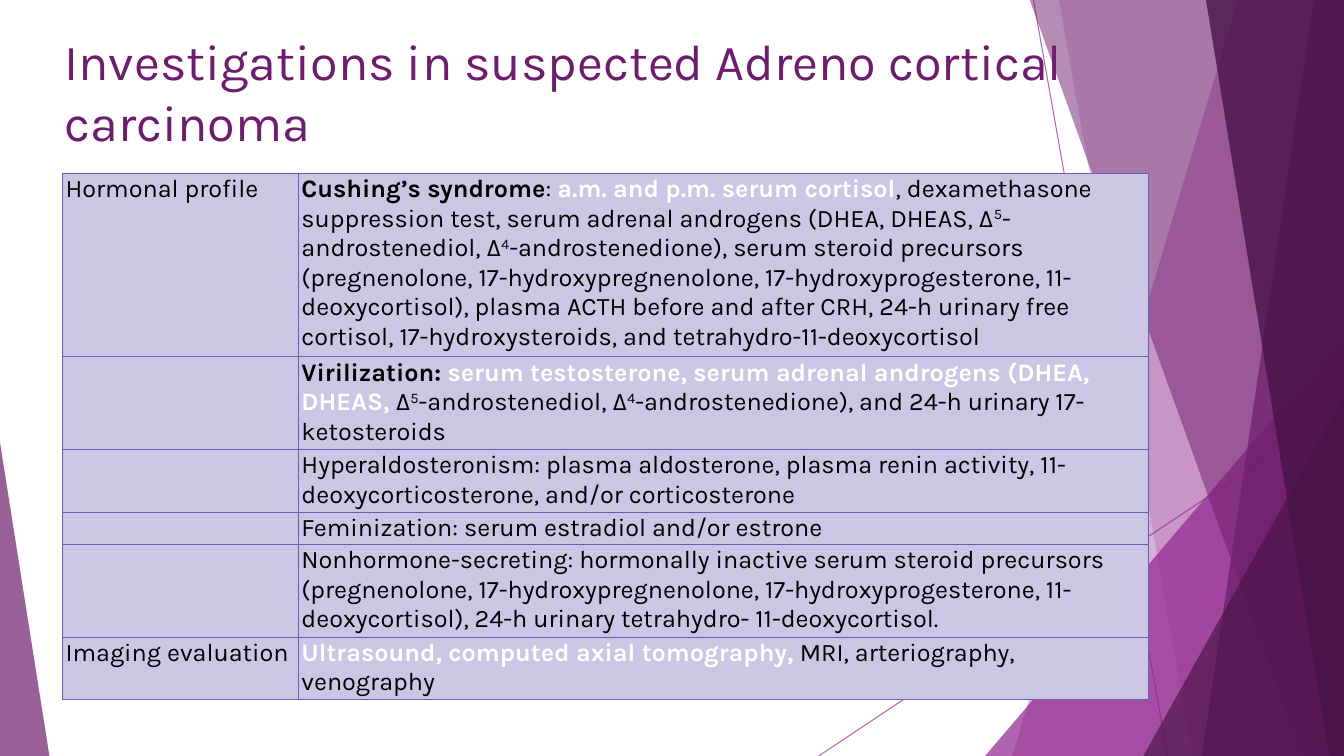
import pptx
import pptx.dml.color
import pptx.enum.shapes
import pptx.enum.text
import pptx.oxml
import pptx.oxml.ns
import pptx.util

Inches = pptx.util.Inches
qn = pptx.oxml.ns.qn
RGB = pptx.dml.color.RGBColor.from_string
COLORS = {
    "magenta": "92278F", "purple": "6D1D6B", "plum": "491447",
    "cell": "CAC6E3", "border": "665EB8", "black": "000000", "white": "FFFFFF",
}
WIDTH, HEIGHT = 13.33, 7.5


def add_text(paragraph, text, size=18, color="black", bold=False, superscript=False):
    run = paragraph.add_run()
    run.text = text
    run.font.name = "Karla"
    run.font.size = pptx.util.Pt(size)
    run.font.bold = bold
    run.font.color.rgb = RGB(COLORS[color])
    if superscript:
        run.font._element.set("baseline", "30000")


def paint(shape, fill, color, opacity):
    fill.solid()
    fill.fore_color.rgb = RGB(COLORS[color])
    alpha = pptx.oxml.parse_xml(f'<a:alpha {pptx.oxml.ns.nsdecls("a")} val="{opacity * 1000}"/>')
    shape._element.spPr.find(".//" + qn("a:srgbClr")).append(alpha)


presentation = pptx.Presentation()
presentation.slide_width = Inches(WIDTH)
presentation.slide_height = Inches(HEIGHT)
slide = presentation.slides.add_slide(presentation.slide_layouts[6])

# Thin background lines
for x1, y1, x2, y2 in [(10.25, 0, 11.58, HEIGHT), (WIDTH, 4.03, 8.12, HEIGHT)]:
    connector = slide.shapes.add_connector(
        pptx.enum.shapes.MSO_CONNECTOR.STRAIGHT,
        Inches(x1), Inches(y1), Inches(x2), Inches(y2))
    connector.line.width = pptx.util.Pt(0.75)
    paint(connector, connector.line.fill, "magenta", 70)
    connector._element.spPr.append(pptx.oxml.parse_xml(f'<a:effectLst {pptx.oxml.ns.nsdecls("a")}/>'))

# Background facets, back to front
# band: top left x, bottom left x; triangle: left, top, width, apex position
facets = [
    ("band", (12.28, 10.04), "magenta", 36),
    ("band", (10.5, 11.83), "magenta", 20),
    ("triangle", (9.77, 3.33, 3.56, 1), "magenta", 72),
    ("band", (10.21, 12.91), "purple", 50),
    ("band", (13.03, 11.92), "purple", 70),
    ("band", (11.96, 13.18), "plum", 80),
    ("triangle", (11.34, 3.93, 1.99, 1), "plum", 66),
    ("triangle", (0, 4.39, 0.49, 0), "purple", 70),
]
for kind, geometry, color, opacity in facets:
    if kind == "band":
        top_x, bottom_x = geometry
        builder = slide.shapes.build_freeform(Inches(top_x), Inches(-0.01))
        corners = [(WIDTH, -0.01), (WIDTH, HEIGHT), (bottom_x, HEIGHT)]
        builder.add_line_segments([(Inches(x), Inches(y)) for x, y in corners], close=True)
        shape = builder.convert_to_shape()
    else:
        left, top, width, apex = geometry
        shape = slide.shapes.add_shape(
            pptx.enum.shapes.MSO_SHAPE.ISOSCELES_TRIANGLE,
            Inches(left), Inches(top), Inches(width), Inches(HEIGHT - top))
        shape.adjustments[0] = apex
    shape.shadow.inherit = False
    shape.line.fill.background()
    paint(shape, shape.fill, color, opacity)

# Title
title = slide.shapes.add_textbox(Inches(0.54), Inches(0.18), Inches(10.42), Inches(1.44))
title.text_frame.word_wrap = True
title.text_frame.vertical_anchor = pptx.enum.text.MSO_ANCHOR.MIDDLE
add_text(title.text_frame.paragraphs[0], "Investigations in suspected Adreno cortical carcinoma",
         size=36, color="purple")

# Table content: row height, label, runs of the description
PLAIN = {}
BOLD = {"bold": True}
HIGHLIGHT = {"bold": True, "color": "white"}
SUPER = {"superscript": True}
rows = [
    (1.79, "Hormonal profile", [
        ("Cushing’s syndrome", BOLD), (": ", PLAIN),
        ("a.m. and p.m. serum cortisol", HIGHLIGHT),
        (", dexamethasone suppression test, serum adrenal androgens (DHEA, DHEAS, Δ", PLAIN),
        ("5", SUPER), ("-androstenediol, Δ", PLAIN), ("4", SUPER),
        ("-androstenedione), serum steroid precursors (pregnenolone, "
         "17-hydroxypregnenolone, 17-hydroxyprogesterone, 11-deoxycortisol), "
         "plasma ACTH before and after CRH, 24-h urinary free cortisol, "
         "17-hydroxysteroids, and tetrahydro-11-deoxycortisol", PLAIN)]),
    (0.91, "", [
        ("Virilization: ", BOLD),
        ("serum testosterone, serum adrenal androgens (DHEA, DHEAS, ", HIGHLIGHT),
        ("Δ", PLAIN), ("5", SUPER), ("-androstenediol, Δ", PLAIN), ("4", SUPER),
        ("-androstenedione), and 24-h urinary 17-ketosteroids", PLAIN)]),
    (0.61, "", [
        ("Hyperaldosteronism: plasma aldosterone, plasma renin activity, "
         "11-deoxycorticosterone, and/or corticosterone", PLAIN)]),
    (0.32, "", [("Feminization: serum estradiol and/or estrone", PLAIN)]),
    (0.9, "", [
        ("Nonhormone-secreting: hormonally inactive serum steroid precursors "
         "(pregnenolone, 17-hydroxypregnenolone, 17-hydroxyprogesterone, "
         "11-deoxycortisol), 24-h urinary tetrahydro- 11-deoxycortisol.", PLAIN)]),
    (0.61, "Imaging evaluation", [
        ("Ultrasound, computed axial tomography,", HIGHLIGHT),
        (" MRI, arteriography, venography", PLAIN)]),
]

# Table
table = slide.shapes.add_table(
    len(rows), 2, Inches(0.62), Inches(1.72), Inches(10.77),
    Inches(sum(row[0] for row in rows))).table
table.first_row = table.horz_banding = False
for column, width in zip(table.columns, (2.34, 8.43)):
    column.width = Inches(width)

for row_index, (height, label, description) in enumerate(rows):
    table.rows[row_index].height = Inches(height)
    label_runs = [(label, PLAIN)] if label else []
    for column_index, runs in enumerate((label_runs, description)):
        cell = table.cell(row_index, column_index)
        cell.margin_left = cell.margin_right = Inches(0.03)
        cell.margin_top = cell.margin_bottom = Inches(0.01)
        cell.fill.solid()
        cell.fill.fore_color.rgb = RGB(COLORS["cell"])
        for text, style in runs:
            add_text(cell.text_frame.paragraphs[0], text, **style)
        # Cell borders come before the fill
        properties = cell._tc.get_or_add_tcPr()
        for position, side in enumerate("LRTB"):
            properties.insert(position, pptx.oxml.parse_xml(
                f'<a:ln{side} {pptx.oxml.ns.nsdecls("a")} w="12700"><a:solidFill>'
                f'<a:srgbClr val="{COLORS["border"]}"/></a:solidFill></a:ln{side}>'))

presentation.save("out.pptx")
